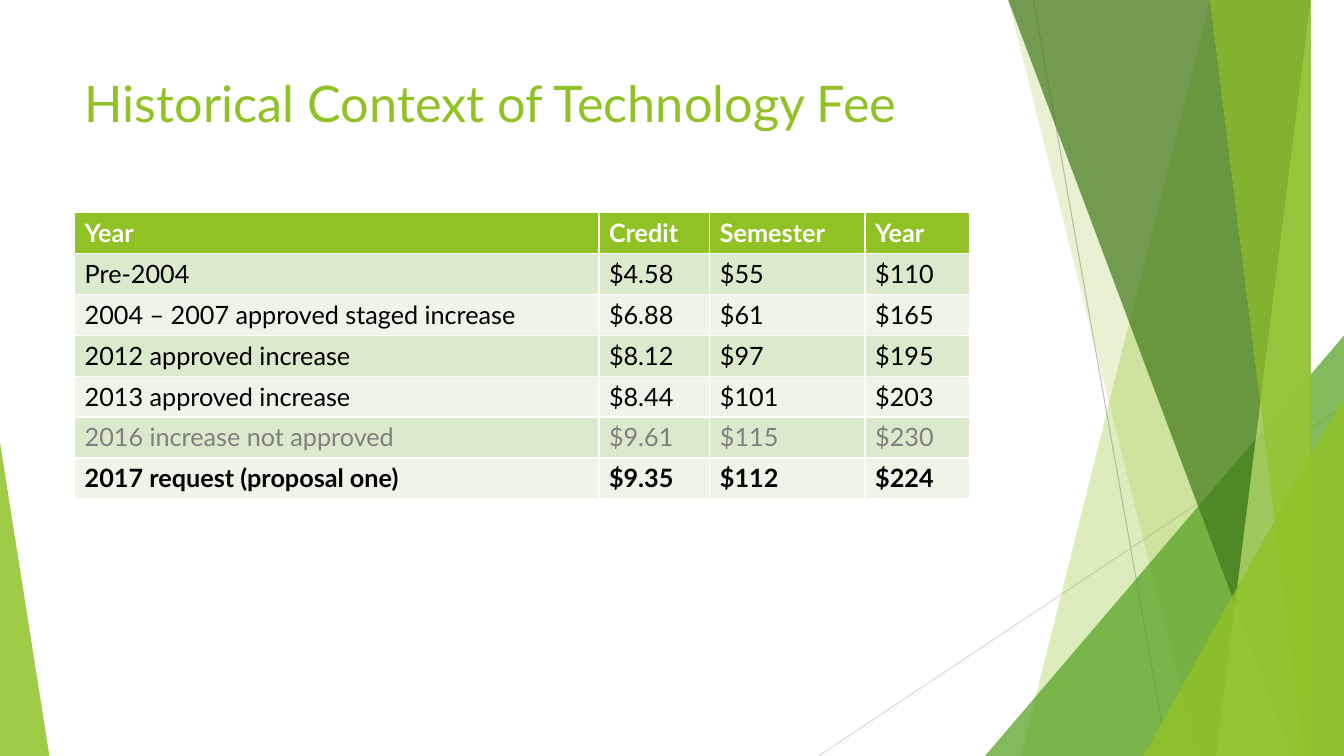
from lxml.etree import SubElement
from pptx import Presentation
from pptx.dml.color import RGBColor
from pptx.enum.shapes import MSO_CONNECTOR, MSO_SHAPE
from pptx.enum.text import MSO_ANCHOR, MSO_AUTO_SIZE, PP_ALIGN
from pptx.oxml.ns import qn
from pptx.util import Inches, Pt

FONT = "Lato"
WIDTH, HEIGHT = 13.33, 7.5
FACET_TOP = -0.01

WHITE = RGBColor(0xFF, 0xFF, 0xFF)
BLACK = RGBColor(0x00, 0x00, 0x00)
GREY = RGBColor(0x80, 0x80, 0x80)
LINE_GREY = RGBColor(0xBF, 0xBF, 0xBF)
LINE_PALE = RGBColor(0xD9, 0xD9, 0xD9)
LIME = RGBColor(0x90, 0xC2, 0x26)
LIGHT_LIME = RGBColor(0xC0, 0xE4, 0x74)
GREEN = RGBColor(0x54, 0xA0, 0x21)
DARK_GREEN = RGBColor(0x3F, 0x78, 0x19)
BAND_DARK = RGBColor(0xDB, 0xE9, 0xCD)
BAND_LIGHT = RGBColor(0xEE, 0xF4, 0xE8)

FEE_COLUMNS = [5.2, 1.1, 1.54, 1.04]
FEE_ROWS = [
    ("Year", "Credit", "Semester", "Year"),
    ("Pre-2004", "$4.58", "$55", "$110"),
    ("2004 – 2007 approved staged increase", "$6.88", "$61", "$165"),
    ("2012 approved increase", "$8.12", "$97", "$195"),
    ("2013 approved increase", "$8.44", "$101", "$203"),
    ("2016 increase not approved", "$9.61", "$115", "$230"),
    ("2017 request (proposal one)", "$9.35", "$112", "$224"),
]
REJECTED_ROW = 5
REQUEST_ROW = 6


def add_run(p, text, size, color, bold=False):
    r = p.add_run()
    r.text = text
    r.font.name = FONT
    r.font.size = Pt(size)
    r.font.bold = bold
    r.font.color.rgb = color


def paint(sp, color, opacity):
    """Give a shape a see-through fill, with opacity in percent."""
    sp.shadow.inherit = False
    sp.line.fill.background()
    sp.fill.solid()
    sp.fill.fore_color.rgb = color
    clr = sp.element.spPr.find(qn("a:solidFill"))[0]
    SubElement(clr, qn("a:alpha")).set("val", str(opacity * 1000))


def add_thin_line(shapes, start, end, color):
    points = [Inches(v) for v in (*start, *end)]
    line = shapes.add_connector(MSO_CONNECTOR.STRAIGHT, *points)
    line.line.color.rgb = color
    line.line.width = Pt(0.75)
    SubElement(line.element.spPr, qn("a:effectLst"))


def add_facet(shapes, top_x, bottom_x, color, opacity):
    """Fill from a slanted left edge to the right edge of the slide."""
    builder = shapes.build_freeform(top_x, FACET_TOP, scale=Inches(1))
    builder.add_line_segments(
        [(WIDTH, FACET_TOP), (WIDTH, HEIGHT), (bottom_x, HEIGHT)])
    paint(builder.convert_to_shape(), color, opacity)


def add_corner(shapes, left, top, width, apex, color, opacity):
    """Stand a triangle on the bottom of the slide; apex 0 is left, 1 right."""
    sp = shapes.add_shape(MSO_SHAPE.ISOSCELES_TRIANGLE, Inches(left),
                          Inches(top), Inches(width), Inches(HEIGHT - top))
    sp.adjustments[0] = apex
    paint(sp, color, opacity)


def add_decoration(shapes):
    add_thin_line(shapes, (10.25, 0), (11.58, HEIGHT), LINE_GREY)
    add_thin_line(shapes, (WIDTH, 4.03), (8.12, HEIGHT), LINE_PALE)
    add_facet(shapes, 12.28, 10.04, LIME, 30)
    add_facet(shapes, 10.5, 11.83, LIME, 20)
    add_corner(shapes, 9.77, 3.33, 3.56, 1, GREEN, 72)
    add_facet(shapes, 10.21, 12.91, DARK_GREEN, 70)
    add_facet(shapes, 13.03, 11.92, LIGHT_LIME, 70)
    add_facet(shapes, 11.96, 13.18, LIME, 65)
    add_corner(shapes, 11.34, 3.93, 1.99, 1, LIME, 80)
    add_corner(shapes, 0, 4.39, 0.49, 0, LIME, 85)


def place_title(shapes, left, top, width, height):
    title = shapes.title
    title.left, title.top = Inches(left), Inches(top)
    title.width, title.height = Inches(width), Inches(height)
    shapes.element.append(title.element)  # in front of the decoration
    tf = title.text_frame
    tf.word_wrap = True
    tf.auto_size = MSO_AUTO_SIZE.NONE
    tf.vertical_anchor = MSO_ANCHOR.TOP
    p = tf.paragraphs[0]
    p.alignment = PP_ALIGN.LEFT
    add_run(p, "Historical Context of Technology Fee", 36, LIME)


def row_style(row):
    """Return the fill, text colour and boldness of a table row."""
    if row == 0:
        return LIME, WHITE, True
    fill = BAND_DARK if row % 2 else BAND_LIGHT
    return fill, GREY if row == REJECTED_ROW else BLACK, row == REQUEST_ROW


def add_fee_table(shapes, left, top, width, height):
    table = shapes.add_table(len(FEE_ROWS), len(FEE_COLUMNS), Inches(left),
                             Inches(top), Inches(width), Inches(height)).table
    for column, column_width in zip(table.columns, FEE_COLUMNS):
        column.width = Inches(column_width)
    for i, texts in enumerate(FEE_ROWS):
        fill, color, bold = row_style(i)
        for j, text in enumerate(texts):
            cell = table.cell(i, j)
            cell.fill.solid()
            cell.fill.fore_color.rgb = fill
            add_run(cell.text_frame.paragraphs[0], text, 18, color, bold)


def main():
    prs = Presentation()
    prs.slide_width, prs.slide_height = Inches(WIDTH), Inches(HEIGHT)
    slide = prs.slides.add_slide(prs.slide_layouts.get_by_name("Title Only"))
    add_decoration(slide.shapes)
    place_title(slide.shapes, 0.74, 0.67, 9.4, 1.44)
    add_fee_table(slide.shapes, 0.74, 2.11, sum(FEE_COLUMNS), 2.84)
    prs.save("out.pptx")


if __name__ == "__main__":
    main()
